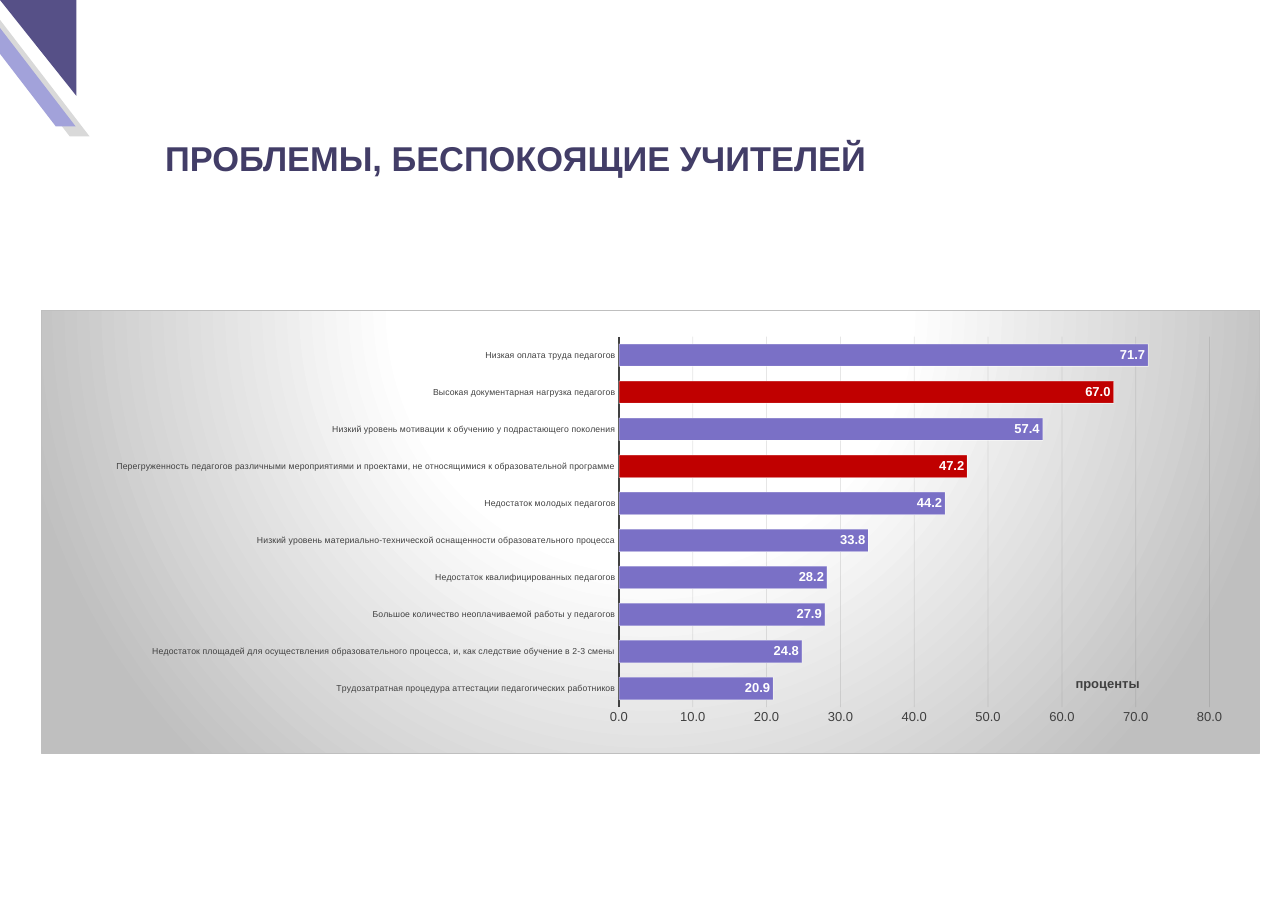
from lxml import etree
from pptx import Presentation
from pptx.chart.data import CategoryChartData
from pptx.dml.color import RGBColor
from pptx.enum.chart import XL_CHART_TYPE, XL_LABEL_POSITION, XL_TICK_MARK
from pptx.enum.shapes import MSO_SHAPE
from pptx.enum.text import MSO_ANCHOR, MSO_AUTO_SIZE, PP_ALIGN
from pptx.oxml import parse_xml
from pptx.oxml.ns import nsdecls, qn
from pptx.util import Inches, Pt

BAR_CLUSTERED = XL_CHART_TYPE.BAR_CLUSTERED
INSIDE_END = XL_LABEL_POSITION.INSIDE_END
NO_TICK = XL_TICK_MARK.NONE
PARALLELOGRAM = MSO_SHAPE.PARALLELOGRAM
RIGHT_TRIANGLE = MSO_SHAPE.RIGHT_TRIANGLE

FONT = "Arial"
VIOLET, RED, WHITE, DARK_GREY, GREY = "7A70C6", "C00000", "FFFFFF", "404040", "BFBFBF"
NUMBER_FORMAT = "0.0"

PROBLEMS = [
    ("Трудозатратная процедура аттестации педагогических работников", 20.9, VIOLET),
    ("Недостаток площадей для осуществления образовательного процесса, "
     "и, как следствие обучение в 2-3 смены", 24.8, VIOLET),
    ("Большое количество неоплачиваемой работы у педагогов", 27.9, VIOLET),
    ("Недостаток квалифицированных педагогов", 28.2, VIOLET),
    ("Низкий уровень материально-технической оснащенности "
     "образовательного процесса", 33.8, VIOLET),
    ("Недостаток молодых педагогов", 44.2, VIOLET),
    ("Перегруженность педагогов различными мероприятиями и проектами, "
     "не относящимися к образовательной программе", 47.2, RED),
    ("Низкий уровень мотивации к обучению у подрастающего поколения", 57.4, VIOLET),
    ("Высокая документарная нагрузка педагогов", 67.0, RED),
    ("Низкая оплата труда педагогов", 71.7, VIOLET),
]

CHART_BACKGROUND = f"""<c:spPr {nsdecls('c', 'a')}>
  <a:gradFill><a:gsLst>
    <a:gs pos="0"><a:srgbClr val="{WHITE}"/></a:gs>
    <a:gs pos="39000"><a:srgbClr val="{WHITE}"/></a:gs>
    <a:gs pos="100000"><a:srgbClr val="{GREY}"/></a:gs>
  </a:gsLst><a:path path="circle">
    <a:fillToRect l="50000" t="-80000" r="50000" b="180000"/>
  </a:path></a:gradFill>
  <a:ln w="9525"><a:solidFill><a:srgbClr val="{GREY}"/></a:solidFill></a:ln>
</c:spPr>"""


def color(hex_value):
    return RGBColor.from_string(hex_value)


def set_font(font, size, hex_value, bold=False):
    font.name, font.size, font.bold = FONT, Pt(size), bold
    font.color.rgb = color(hex_value)


def set_line(line, hex_value, width):
    line.color.rgb = color(hex_value)
    line.width = Pt(width)


def set_opacity(color_elements, percent):
    for element in color_elements:
        etree.SubElement(element, qn("a:alpha")).set("val", str(percent * 1000))


def place(parent, index, **values):
    """Give a chart part a manual layout, in fractions of the chart."""
    for old_layout in parent.findall(qn("c:layout")):
        parent.remove(old_layout)
    layout = parent.makeelement(qn("c:layout"), {})
    manual = etree.SubElement(layout, qn("c:manualLayout"))
    for name, value in values.items():
        etree.SubElement(manual, qn(f"c:{name}")).set("val", str(value))
    parent.insert(index, layout)


class SlideBuilder:
    def __init__(self, presentation):
        self.slide = presentation.slides.add_slide(presentation.slide_layouts[5])

    def title(self, text, left, top, width, height):
        shape = self.slide.shapes.title
        shape.left, shape.top = Inches(left), Inches(top)
        shape.width, shape.height = Inches(width), Inches(height)
        frame = shape.text_frame
        frame.text = text
        frame.word_wrap = True
        frame.auto_size = MSO_AUTO_SIZE.SHAPE_TO_FIT_TEXT
        frame.vertical_anchor = MSO_ANCHOR.TOP
        frame.margin_left, frame.margin_right = 0, Inches(0.1)
        frame.margin_top = frame.margin_bottom = Inches(0.05)
        paragraph = frame.paragraphs[0]
        paragraph.alignment = PP_ALIGN.LEFT
        set_font(paragraph.font, 31.8, "423D67", bold=True)

    def ornament(self, kind, left, top, width, height, hex_value):
        shape = self.slide.shapes.add_shape(
            kind, Inches(left), Inches(top), Inches(width), Inches(height))
        shape.shadow.inherit = False
        shape.fill.solid()
        shape.fill.fore_color.rgb = color(hex_value)
        shape.line.fill.background()
        return shape

    def stripe(self, left, top, hex_value):
        shape = self.ornament(PARALLELOGRAM, left, top, 1.5, 1.62, hex_value)
        shape.adjustments[0] = 0.83
        shape._element.spPr.xfrm.set("flipH", "1")

    def bar_chart(self, rows, left, top, width, height):
        data = CategoryChartData(number_format=NUMBER_FORMAT)
        data.categories = [label for label, _, _ in rows]
        data.add_series("Series 1", [value for _, value, _ in rows])
        chart = self.slide.shapes.add_chart(
            BAR_CLUSTERED, Inches(left), Inches(top),
            Inches(width), Inches(height), data).chart
        chart.has_legend = chart.has_title = False
        set_font(chart.font, 10, "000000")
        chart._chartSpace.find(qn("c:txPr")).addprevious(parse_xml(CHART_BACKGROUND))
        place(chart._chartSpace.chart.plotArea, 0, layoutTarget="inner",
              xMode="edge", yMode="edge", x=0.474, y=0.059, w=0.485, h=0.837)
        self.bars(chart.plots[0], rows)
        self.axes(chart.category_axis, chart.value_axis)

    def bars(self, plot, rows):
        plot.gap_width = 65
        plot.vary_by_categories = False
        series = plot.series[0]
        parts = [(series, VIOLET)]
        parts += [(series.points[i], row[2]) for i, row in enumerate(rows) if row[2] != VIOLET]
        for part, hex_value in parts:
            part.format.fill.solid()
            part.format.fill.fore_color.rgb = color(hex_value)
            set_line(part.format.line, WHITE, 0.75)
        set_opacity(series._element.xpath(".//a:ln//a:srgbClr"), 50)
        labels = series.data_labels
        labels.show_value = True
        labels.position = INSIDE_END
        labels.number_format, labels.number_format_is_linked = NUMBER_FORMAT, False
        set_font(labels.font, 12, WHITE, bold=True)

    def axes(self, category_axis, value_axis):
        for axis, size in ((category_axis, 8), (value_axis, 12)):
            axis.major_tick_mark = axis.minor_tick_mark = NO_TICK
            set_font(axis.tick_labels.font, size, DARK_GREY)
        set_line(category_axis.format.line, DARK_GREY, 1.5)
        value_axis.format.line.fill.background()
        value_axis.minimum_scale, value_axis.maximum_scale = 0, 80
        value_axis.major_unit = 10
        value_axis.tick_labels.number_format = NUMBER_FORMAT
        value_axis.tick_labels.number_format_is_linked = False
        value_axis.has_major_gridlines = True
        set_line(value_axis.major_gridlines.format.line, "0D0D0D", 0.75)
        set_opacity(value_axis._element.xpath("./c:majorGridlines//a:srgbClr"), 10)
        frame = value_axis.axis_title.text_frame
        frame.text = "проценты"
        set_font(frame.paragraphs[0].font, 12, DARK_GREY, bold=True)
        place(value_axis._element.find(qn("c:title")), 1,
              xMode="edge", yMode="edge", x=0.847, y=0.82)


def main():
    presentation = Presentation()
    presentation.slide_width, presentation.slide_height = Inches(16.53), Inches(11.69)
    builder = SlideBuilder(presentation)
    builder.stripe(-0.35, 0.13, "D9D9D9")
    builder.stripe(-0.53, 0, "A2A2DA")
    corner = builder.ornament(RIGHT_TRIANGLE, 0, 0, 0.98, 1.23, "565087")
    corner.rotation = 180
    builder.bar_chart(PROBLEMS, 0.53, 3.98, 15.64, 5.69)
    builder.title("ПРОБЛЕМЫ, БЕСПОКОЯЩИЕ УЧИТЕЛЕЙ", 2.12, 1.71, 9.91, 0.64)
    presentation.save("out.pptx")


if __name__ == "__main__":
    main()
